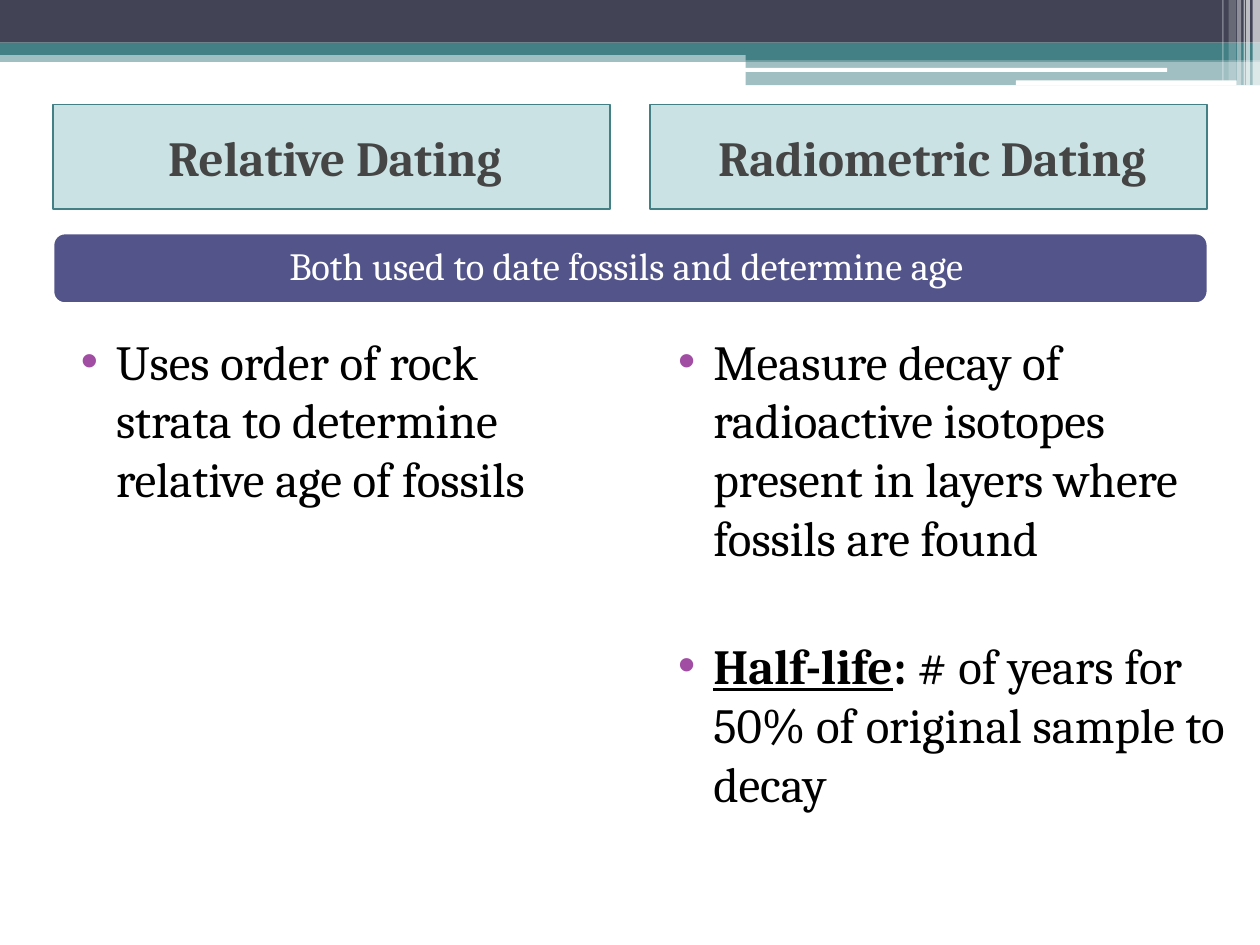
from lxml.etree import SubElement
from pptx import Presentation
from pptx.dml.color import RGBColor
from pptx.enum.shapes import MSO_SHAPE
from pptx.enum.text import MSO_ANCHOR, PP_ALIGN
from pptx.oxml.ns import qn
from pptx.util import Cm, Pt

COLORS = {
    "slate": "424456",
    "teal": "438086",
    "aqua": "328E97",
    "indigo": "53548A",
    "bullet": "A04DA3",
    "heading": "454545",
    "white": "FFFFFF",
    "black": "000000",
}
FONT = "Cambria"
LEFT_COLUMN, RIGHT_COLUMN = 1.07, 13.11
COLUMN_WIDTH = 11.23

BANDS = [
    (0, 1.02, 25.4, 0.23, "teal", 50),
    (0, 0, 25.4, 0.86, "slate", 100),
    (0, 0.86, 25.4, 0.25, "teal", 100),
    (15.03, 0.99, 10.37, 0.23, "teal", 100),
    (15.03, 1.22, 10.37, 0.5, "teal", 50),
]
HIGHLIGHTS = [(15.02, 1.37, 8.51, 0.08), (20.48, 1.62, 4.45, 0.1)]
STRIPES = [
    (25.25, 0.15, 1.73, 65),
    (25.12, 0.08, 1.73, 65),
    (25.07, 0.03, 1.73, 60),
    (24.94, 0.08, 1.73, 40),
    (24.77, 0.15, 1.63, 20),
    (24.64, 0.03, 1.63, 30),
]


def rgb(name):
    return RGBColor.from_string(COLORS[name])


def add_block(slide, left, top, width, height, color, opacity=100,
              preset=MSO_SHAPE.RECTANGLE, outline=None, outline_width=1):
    block = slide.shapes.add_shape(preset, Cm(left), Cm(top), Cm(width), Cm(height))
    block.shadow.inherit = False
    block.fill.solid()
    block.fill.fore_color.rgb = rgb(color)
    if opacity < 100:
        srgb = block.fill._xPr.find(qn("a:solidFill")).find(qn("a:srgbClr"))
        SubElement(srgb, qn("a:alpha"), val=str(opacity * 1000))
    if outline:
        block.line.color.rgb = rgb(outline)
        block.line.width = Pt(outline_width)
    else:
        block.line.fill.background()
    return block


def add_run(paragraph, words, size, color, bold=False, underline=False):
    run = paragraph.add_run()
    run.text = words
    run.font.name = FONT
    run.font.size = Pt(size)
    run.font.bold = bold
    run.font.underline = underline
    run.font.color.rgb = rgb(color)


def add_header_bands(slide):
    for band in BANDS:
        add_block(slide, *band)
    for highlight in HIGHLIGHTS:
        add_block(slide, *highlight, "white", preset=MSO_SHAPE.ROUNDED_RECTANGLE)
    for left, width, height, opacity in STRIPES:
        add_block(slide, left, 0, width, height, "white", opacity)


def add_banner(slide, words):
    banner = add_block(slide, 1.07, 4.7, 23.28, 1.42, "indigo",
                       preset=MSO_SHAPE.ROUNDED_RECTANGLE,
                       outline="white", outline_width=1.5)
    banner.text_frame.vertical_anchor = MSO_ANCHOR.MIDDLE
    paragraph = banner.text_frame.paragraphs[0]
    paragraph.alignment = PP_ALIGN.CENTER
    paragraph.line_spacing = 0.9
    add_run(paragraph, words, 22, "white")


def add_heading(slide, left, words):
    heading = add_block(slide, left, 2.11, COLUMN_WIDTH, 2.11, "aqua", 25, outline="teal")
    heading.text_frame.vertical_anchor = MSO_ANCHOR.MIDDLE
    paragraph = heading.text_frame.paragraphs[0]
    paragraph.alignment = PP_ALIGN.CENTER
    paragraph.space_before = Pt(3)
    paragraph._p.get_or_add_pPr().set("marL", str(Cm(0.13)))
    add_run(paragraph, words, 28, "heading", bold=True)


def set_bullet(paragraph):
    properties = paragraph._p.get_or_add_pPr()
    properties.set("marL", str(Cm(1.02)))
    properties.set("indent", str(Cm(-0.71)))
    bullet_color = SubElement(properties, qn("a:buClr"))
    SubElement(bullet_color, qn("a:srgbClr"), val=COLORS["bullet"])
    SubElement(properties, qn("a:buFont"), typeface="Arial")
    SubElement(properties, qn("a:buChar"), char="•")


def add_bullets(slide, left, width, points):
    column = slide.shapes.add_textbox(Cm(left), Cm(6.55), Cm(width), Cm(10.8))
    frame = column.text_frame
    frame.word_wrap = True
    for index, point in enumerate(points):
        paragraph = frame.add_paragraph() if index else frame.paragraphs[0]
        paragraph.space_before = Pt(39.5 if index else 3)
        set_bullet(paragraph)
        for words, bold, underline in point:
            add_run(paragraph, words, 28, "black", bold, underline)


def main():
    deck = Presentation()
    deck.slide_width, deck.slide_height = Cm(25.4), Cm(19.05)
    slide = deck.slides.add_slide(deck.slide_layouts[6])

    add_header_bands(slide)
    add_banner(slide, "Both used to date fossils and determine age ")
    add_heading(slide, LEFT_COLUMN, "Relative Dating")
    add_heading(slide, RIGHT_COLUMN, "Radiometric Dating")
    add_bullets(slide, LEFT_COLUMN, COLUMN_WIDTH, [
        [("Uses order of rock strata to determine relative age of fossils", False, False)],
    ])
    add_bullets(slide, RIGHT_COLUMN, 11.87, [
        [("Measure decay of radioactive isotopes present in layers where fossils are found",
          False, False)],
        [("Half-life", True, True),
         (": ", True, False),
         ("# of years for 50% of original sample to decay", False, False)],
    ])

    deck.save("out.pptx")


if __name__ == "__main__":
    main()
